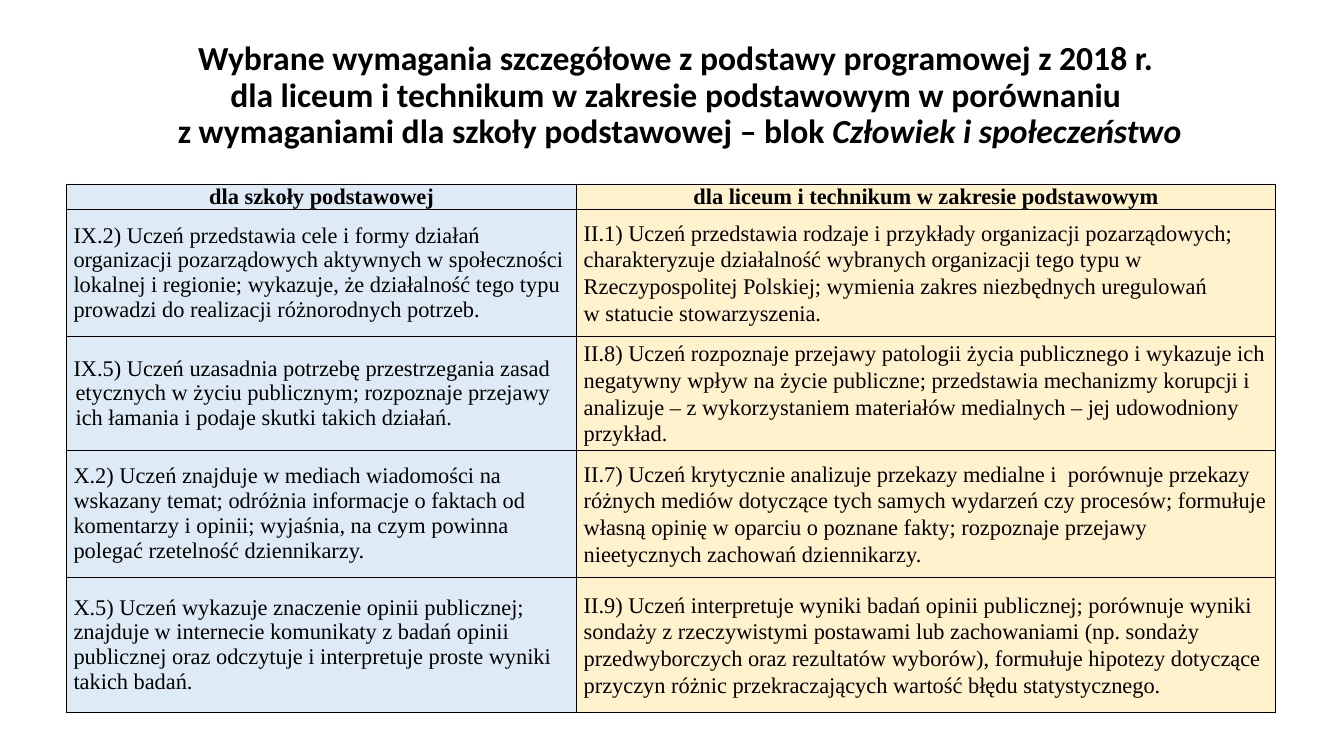
from lxml.etree import SubElement
from pptx import Presentation
from pptx.dml.color import RGBColor
from pptx.enum.text import MSO_ANCHOR as Anchor, PP_ALIGN as Align
from pptx.oxml.ns import qn
from pptx.util import Inches, Pt

BLACK, BLUE, YELLOW = "000000", "DEEBF7", "FFF2CC"
TITLE_LINES = [
    "Wybrane wymagania szczegółowe z podstawy programowej z 2018 r. ",
    "dla liceum i technikum w zakresie podstawowym w porównaniu ",
    "z wymaganiami dla szkoły podstawowej – blok ",
]
BLOCK_NAME = "Człowiek i społeczeństwo"
HEADINGS = ("dla szkoły podstawowej", "dla liceum i technikum w zakresie podstawowym")
REQUIREMENTS = [
    ("IX.2) Uczeń przedstawia cele i formy działań organizacji pozarządowych "
     "aktywnych w społeczności lokalnej i regionie; wykazuje, że działalność tego typu "
     "prowadzi do realizacji różnorodnych potrzeb.",
     "II.1) Uczeń przedstawia rodzaje i przykłady organizacji pozarządowych; "
     "charakteryzuje działalność wybranych organizacji tego typu "
     "w Rzeczypospolitej Polskiej; wymienia zakres niezbędnych uregulowań\n"
     "w statucie stowarzyszenia."),
    ("IX.5) Uczeń uzasadnia potrzebę przestrzegania zasad etycznych "
     "w życiu publicznym; rozpoznaje przejawy ich łamania i podaje skutki takich działań.",
     "II.8) Uczeń rozpoznaje przejawy patologii życia publicznego i wykazuje ich "
     "negatywny wpływ na życie publiczne; przedstawia mechanizmy korupcji "
     "i analizuje – z wykorzystaniem materiałów medialnych – jej udowodniony przykład."),
    ("X.2) Uczeń znajduje w mediach wiadomości na wskazany temat; odróżnia informacje "
     "o faktach od komentarzy i opinii; wyjaśnia, na czym powinna polegać "
     "rzetelność dziennikarzy.",
     "II.7) Uczeń krytycznie analizuje przekazy medialne i  porównuje przekazy "
     "różnych mediów dotyczące tych samych wydarzeń czy procesów; formułuje własną "
     "opinię w oparciu o poznane fakty; rozpoznaje przejawy nieetycznych zachowań "
     "dziennikarzy."),
    ("X.5) Uczeń wykazuje znaczenie opinii publicznej; znajduje w internecie "
     "komunikaty z badań opinii publicznej oraz odczytuje i interpretuje proste "
     "wyniki takich badań.",
     "II.9) Uczeń interpretuje wyniki badań opinii publicznej; porównuje wyniki "
     "sondaży z rzeczywistymi postawami lub zachowaniami (np. sondaży przedwyborczych "
     "oraz rezultatów wyborów), formułuje hipotezy dotyczące przyczyn różnic "
     "przekraczających wartość błędu statystycznego."),
]
COLUMN_WIDTHS = (5.06, 6.93)
ROW_HEIGHTS = (0.23, 1.26, 1.13, 1.26, 1.34)
HANGING_ROW = 2


def color(value):
    return RGBColor.from_string(value)


def add_span(para, text, *, size, font, bold=False, italic=False):
    span = para.add_run()
    span.text = text
    span.font.size = Pt(size)
    span.font.name = font
    span.font.bold = bold
    span.font.italic = italic
    span.font.color.rgb = color(BLACK)


def add_title(page):
    title = page.shapes.title
    title.left, title.top = Inches(0.99), Inches(0.23)
    title.width, title.height = Inches(11.5), Inches(1.45)
    title.text_frame.vertical_anchor = Anchor.MIDDLE
    title.text_frame.word_wrap = True
    para = title.text_frame.paragraphs[0]
    para.alignment = Align.CENTER
    para.line_spacing = 0.9
    style = dict(size=24, font="Calibri", bold=True)
    for number, line in enumerate(TITLE_LINES):
        if number:
            para.add_line_break()
        add_span(para, line, **style)
    add_span(para, BLOCK_NAME, italic=True, **style)


def add_borders(cell):
    properties = cell._tc.get_or_add_tcPr()
    for position, side in enumerate(("lnL", "lnR", "lnT", "lnB")):
        line = SubElement(properties, qn(f"a:{side}"), w=str(Pt(1)))
        fill = SubElement(line, qn("a:solidFill"))
        SubElement(fill, qn("a:srgbClr"), val=BLACK)
        properties.insert(position, line)


def fill_cell(cell, text, *, fill, bold=False, align=None, spacing=None, hanging=0):
    cell.fill.solid()
    cell.fill.fore_color.rgb = color(fill)
    add_borders(cell)
    cell.vertical_anchor = Anchor.MIDDLE
    cell.margin_left = cell.margin_right = Inches(0.07)
    cell.margin_top = cell.margin_bottom = 0
    frame = cell.text_frame
    for number, line in enumerate(text.split("\n")):
        para = frame.add_paragraph() if number else frame.paragraphs[0]
        para.alignment = align
        para.line_spacing = spacing
        if hanging:
            properties = para._p.get_or_add_pPr()
            properties.set("marL", str(Inches(hanging)))
            properties.set("indent", str(-Inches(hanging)))
        add_span(para, line, size=16, font="Times New Roman", bold=bold)


def add_requirements_table(page):
    table = page.shapes.add_table(
        len(ROW_HEIGHTS), len(COLUMN_WIDTHS), Inches(0.66), Inches(1.83),
        Inches(sum(COLUMN_WIDTHS)), Inches(sum(ROW_HEIGHTS))).table
    for column, width in zip(table.columns, COLUMN_WIDTHS):
        column.width = Inches(width)
    for row, height in zip(table.rows, ROW_HEIGHTS):
        row.height = Inches(height)
    for column, (heading, fill) in enumerate(zip(HEADINGS, (BLUE, YELLOW))):
        fill_cell(table.cell(0, column), heading, fill=fill, bold=True, align=Align.CENTER)
    for row, (primary, secondary) in enumerate(REQUIREMENTS, 1):
        fill_cell(table.cell(row, 0), primary, fill=BLUE,
                  hanging=0.02 if row == HANGING_ROW else 0)
        fill_cell(table.cell(row, 1), secondary, fill=YELLOW, spacing=1.07)


def main():
    deck = Presentation()
    deck.slide_width, deck.slide_height = Inches(13.33), Inches(7.5)
    page = deck.slides.add_slide(deck.slide_layouts[5])
    add_title(page)
    add_requirements_table(page)
    deck.save("out.pptx")


if __name__ == "__main__":
    main()
